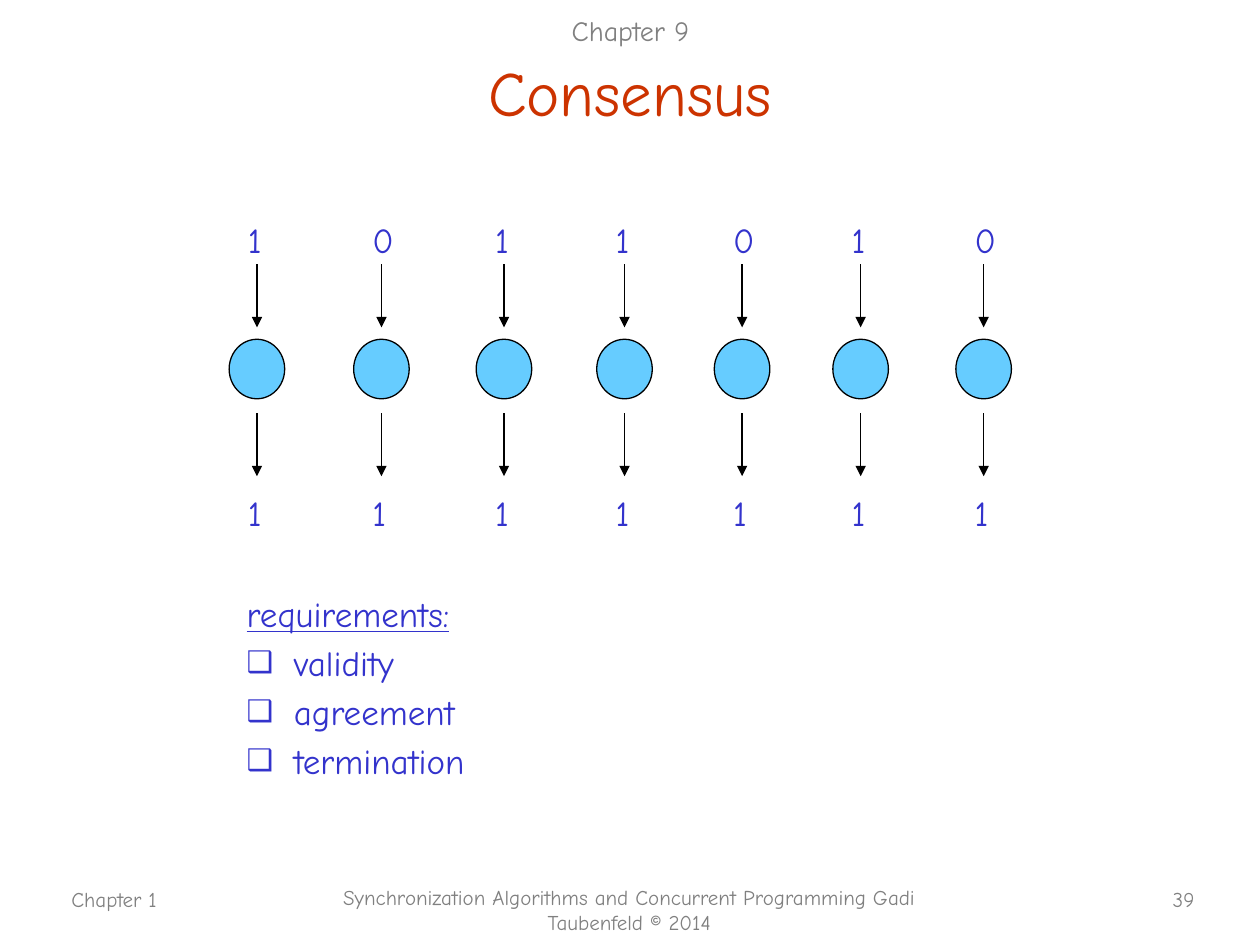
import lxml.etree
import pptx
import pptx.dml.color
import pptx.enum.shapes
import pptx.enum.text
import pptx.oxml
import pptx.oxml.ns
import pptx.util

Cm = pptx.util.Cm
Pt = pptx.util.Pt
qn = pptx.oxml.ns.qn
ALIGN = pptx.enum.text.PP_ALIGN
ANCHOR = pptx.enum.text.MSO_ANCHOR
NO_FIT = pptx.enum.text.MSO_AUTO_SIZE.NONE
NAMESPACE = 'xmlns:a="http://schemas.openxmlformats.org/drawingml/2006/main"'
BLUE, GREY = "3333CC", "808080"


def rgb(code):
    return pptx.dml.color.RGBColor.from_string(code)


def write(paragraph, text, size=20, color=BLUE, align=ALIGN.LEFT, underline=False):
    run = paragraph.add_run()
    run.text = text
    run.font.name = "Comic Neue"
    run.font.size = Pt(size)
    run.font.color.rgb = rgb(color)
    run.font.underline = underline
    paragraph.alignment = align
    return run


deck = pptx.Presentation()
deck.slide_width, deck.slide_height = Cm(25.4), Cm(19.05)
slide = deck.slides.add_slide(deck.slide_layouts[1])

# Title with a soft shadow
title = slide.shapes.title
title.left, title.top, title.width, title.height = Cm(1.9), Cm(0.66), Cm(21.6), Cm(2.36)
title.text_frame.auto_size = NO_FIT
title.text_frame.vertical_anchor = ANCHOR.MIDDLE
heading = write(title.text_frame.paragraphs[0], "Consensus", size=36, color="CC3300", align=ALIGN.CENTER)
shadow = pptx.oxml.parse_xml(
    f'<a:effectLst {NAMESPACE}><a:outerShdw blurRad="38100" dist="38100" dir="2700000">'
    '<a:srgbClr val="C0C0C0"/></a:outerShdw></a:effectLst>')
heading.font.fill  # the shadow must follow the colour in the run's properties
heading._r.get_or_add_rPr().find(qn("a:solidFill")).addnext(shadow)

# Chapter label and footer
for text, left, top, width, height, size, align, anchor in (
    ("Chapter 9", 10.31, 0.15, 4.8, 0.91, 16, ALIGN.CENTER, ANCHOR.MIDDLE),
    ("Chapter 1", 1.19, 17.75, 5.28, 1.27, 12, ALIGN.LEFT, ANCHOR.TOP),
    ("Synchronization Algorithms and Concurrent Programming Gadi Taubenfeld © 2014",
     6.55, 17.7, 12.27, 1.27, 12, ALIGN.CENTER, ANCHOR.TOP),
    ("39", 23.14, 17.75, 1.19, 0.76, 12, ALIGN.RIGHT, ANCHOR.TOP),
):
    label = slide.shapes.add_textbox(Cm(left), Cm(top), Cm(width), Cm(height)).text_frame
    label.word_wrap = True
    label.vertical_anchor = anchor
    write(label.paragraphs[0], text, size=size, color=GREY, align=align)

# One group per process: input, arrow, circle, arrow, decision
centers = (5.18, 7.69, 10.16, 12.59, 14.96, 17.35, 19.83)
for center, proposal in zip(centers, "1011010"):
    process = slide.shapes.add_group_shape().shapes
    circle = process.add_shape(
        pptx.enum.shapes.MSO_SHAPE.OVAL, Cm(center - 0.56), Cm(6.84), Cm(1.12), Cm(1.2))
    circle.shadow.inherit = False
    circle.fill.solid()
    circle.fill.fore_color.rgb = rgb("66CCFF")
    circle.line.color.rgb = rgb("000000")
    circle.line.width = Pt(0.75)

    for value, value_top, arrow_top in ((proposal, 4.29, 5.33), ("1", 9.78, 8.33)):
        arrow = process.add_connector(
            pptx.enum.shapes.MSO_CONNECTOR.STRAIGHT,
            Cm(center), Cm(arrow_top), Cm(center), Cm(arrow_top + 1.27))
        arrow.line.color.rgb = rgb("000000")
        arrow.line.width = Pt(0.75)
        lxml.etree.SubElement(arrow.line._get_or_add_ln(), qn("a:tailEnd"), type="triangle")
        lxml.etree.SubElement(arrow._element.spPr, qn("a:effectLst"))

        value_width = 0.94 if value == "0" else 0.84
        bit = process.add_textbox(
            Cm(center - 0.43), Cm(value_top), Cm(value_width), Cm(1.09)).text_frame
        bit.word_wrap = False
        write(bit.paragraphs[0], value)

# Requirements list
requirements = slide.placeholders[1]
requirements.left, requirements.top = Cm(4.72), Cm(11.81)
requirements.width, requirements.height = Cm(9.68), Cm(4.62)
requirements.fill.solid()
requirements.fill.fore_color.rgb = rgb("FFFFFF")
requirements.text_frame.auto_size = NO_FIT
for index, text in enumerate(("requirements:", "validity", "agreement", "termination")):
    is_heading = index == 0
    item = requirements.text_frame.paragraphs[0] if is_heading else requirements.text_frame.add_paragraph()
    write(item, text, underline=is_heading)
    item.space_before = Pt(4)
    properties = item._p.get_or_add_pPr()
    properties.set("marL", str(Cm(0.95)))
    properties.set("indent", str(Cm(-0.95)))
    if is_heading:
        lxml.etree.SubElement(properties, qn("a:buNone"))
    else:
        bullet_color = lxml.etree.SubElement(properties, qn("a:buClr"))
        lxml.etree.SubElement(bullet_color, qn("a:srgbClr"), val=BLUE)
        lxml.etree.SubElement(properties, qn("a:buSzPct"), val="85000")
        lxml.etree.SubElement(properties, qn("a:buChar"), char="❑")

deck.save("out.pptx")
